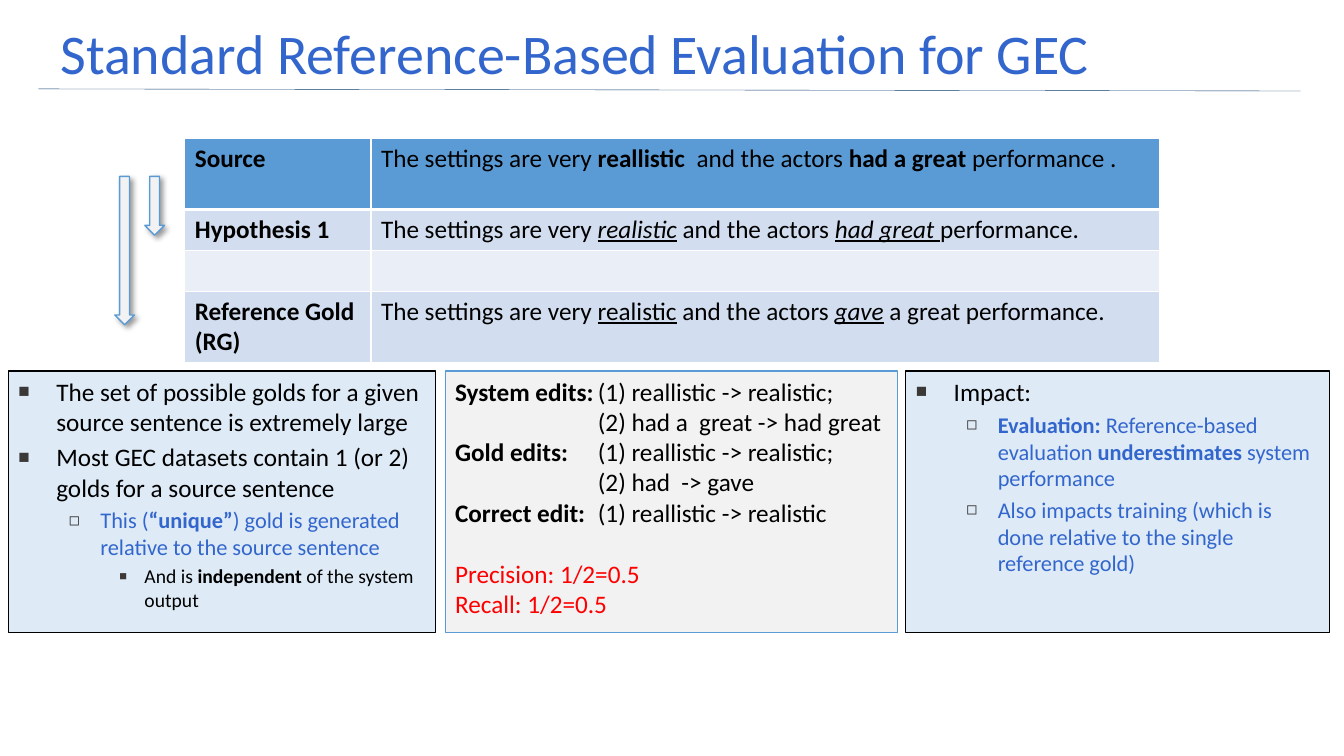
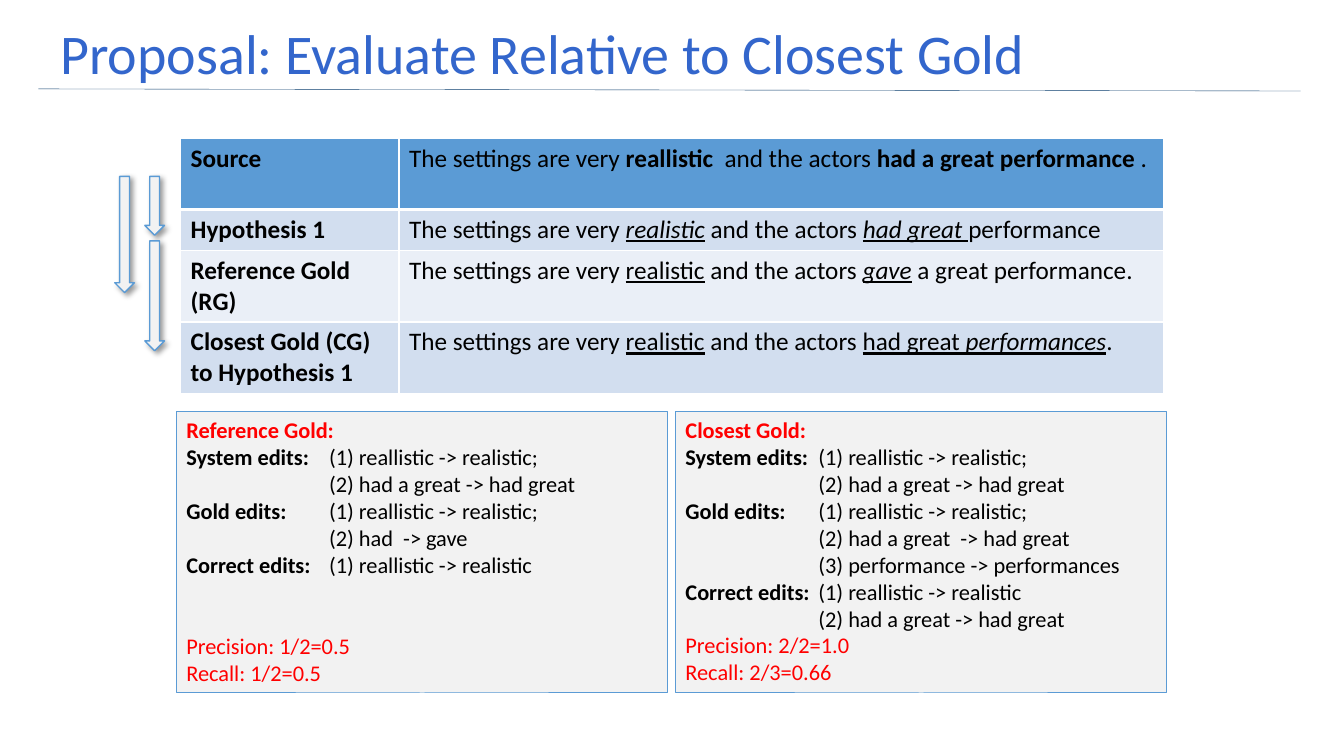
from lxml import etree
from pptx import Presentation
from pptx.dml.color import RGBColor
from pptx.enum import shapes, text
from pptx.oxml.ns import qn
from pptx.util import Pt

FONT = "Calibri"
BLUE, RED, BLACK, WHITE = "3366CC", "FF0000", "000000", "FFFFFF"
ACCENT, PALE_BLUE, PALE_GRAY, RULE = "5B9BD5", "DEEBF7", "F2F2F2", "093D6E"
BAND_DARK, BAND_LIGHT = "D2DEEF", "EAEFF7"
TWO_CONTENT, TITLE_ONLY = 3, 5

START, MIDDLE = "The settings are very ", " and the actors "
SOURCE = [START, ("reallistic", "b"), " " + MIDDLE]
HYPOTHESIS = [START, ("realistic", "iu"), MIDDLE, ("had great ", "iu")]
GOLD = [START, ("realistic", "u"), MIDDLE]
REFERENCE_ROW = ("Reference Gold (RG)",
                 GOLD + [("gave", "iu"), " a great performance."], 51)

STANDARD = dict(
    title="Standard Reference-Based Evaluation for GEC",
    table=dict(x=132, cols=(133, 563), rows=[
        ("Source", SOURCE + [("had a great ", "b"), "performance ."], 51),
        ("Hypothesis 1", HYPOTHESIS + ["performance."], 29.2),
        ("", [], 29.2),
        REFERENCE_ROW]),
    arrows=[(103.5, 126, 42), (82, 126, 106)],
    edits=[dict(box=(318, 265, 323, 187), size=18, tab=102, gap=22, heading="", lines=[
        ("System edits:", "(1) reallistic -> realistic;"),
        ("", "(2) had a  great -> had great"),
        ("Gold edits:", "(1) reallistic -> realistic;"),
        ("", "(2) had  -> gave"),
        ("Correct edit:", "(1) reallistic -> realistic")],
        scores=["Precision: 1/2=0.5", "Recall: 1/2=0.5"])],
    lists=[
        ((6, 265, 305, 187), [
            (0, ["The set of possible golds for a given source sentence is extremely large"]),
            (0, ["Most GEC datasets contain 1 (or 2) golds for a source sentence"]),
            (1, ["This (", ("“unique”", "b"),
                 ") gold is generated relative to the source sentence"]),
            (2, ["And is ", ("independent", "b"), " of the system output"])]),
        ((647, 265, 303, 187), [
            (0, ["Impact:"]),
            (1, [("Evaluation:", "b"), " Reference-based evaluation ",
                 ("underestimates", "b"), " system performance"]),
            (1, ["Also impacts training (which is done relative to the single "
                 "reference gold)"])])])

PROPOSAL = dict(
    title="Proposal: Evaluate Relative to Closest Gold",
    table=dict(x=129, cols=(156, 546), rows=[
        ("Source", SOURCE + [("had a great performance ", "b"), "."], 51),
        ("Hypothesis 1", HYPOTHESIS + ["performance"], 29.2),
        REFERENCE_ROW,
        ("Closest Gold (CG) to Hypothesis 1",
         GOLD + [("had great ", "u"), ("performances", "iu"), "."], 51)]),
    arrows=[(103.5, 126, 42), (82, 126, 83), (103.5, 172, 78.5)],
    edits=[
        dict(box=(126, 294, 351, 201), size=16, tab=102, gap=39,
             heading="Reference Gold:", lines=[
                 ("System edits:", "(1) reallistic -> realistic;"),
                 ("", "(2) had a great -> had great"),
                 ("Gold edits:", "(1) reallistic -> realistic;"),
                 ("", "(2) had  -> gave"),
                 ("Correct edits:", "(1) reallistic -> realistic")],
             scores=["Precision: 1/2=0.5", "Recall: 1/2=0.5"]),
        dict(box=(482.5, 294, 351, 201), size=16, tab=95, gap=0,
             heading="Closest Gold:", lines=[
                 ("System edits:", "(1) reallistic -> realistic;"),
                 ("", "(2) had a great -> had great"),
                 ("Gold edits:", "(1) reallistic -> realistic;"),
                 ("", "(2) had a great  -> had great"),
                 ("", "(3) performance -> performances"),
                 ("Correct edits:", "(1) reallistic -> realistic"),
                 ("", "(2) had a great -> had great")],
             scores=["Precision: 2/2=1.0", "Recall: 2/3=0.66"])],
    lists=[])

LEVELS = [
    dict(size=18, color=BLACK, left=27, hang=27, mark="■", percent=75),
    dict(size=16, color=BLUE, left=58.5, hang=22.5, mark="◻", percent=80),
    dict(size=14, color=BLACK, left=90, hang=18, mark="■", percent=65)]


def rgb(value):
    return RGBColor.from_string(value)


def add_xml(parent, tag, **attrs):
    child = etree.SubElement(parent, qn(tag))
    for key, value in attrs.items():
        child.set(key, str(value))
    return child


def place(sp, box):
    sp.left, sp.top, sp.width, sp.height = map(Pt, box)


def paint(sp, fill, line, width):
    sp.fill.solid()
    sp.fill.fore_color.rgb = rgb(fill)
    sp.line.color.rgb = rgb(line)
    sp.line.width = Pt(width)


def write(p, parts, size, color=BLACK):
    for part in parts:
        words, style = (part, "") if isinstance(part, str) else part
        r = p.add_run()
        r.text = words
        f = r.font
        f.name, f.size, f.color.rgb = FONT, Pt(size), rgb(color)
        f.bold, f.italic, f.underline = (k in style for k in "biu")


def paragraphs(tf, count):
    return [tf.paragraphs[0]] + [tf.add_paragraph() for _ in range(count - 1)]


def set_up_master(prs, s):
    master = prs.slide_master
    place(master.placeholders[0], (36, 16.5, 778, 42))
    rule = s.shapes.add_connector(shapes.MSO_CONNECTOR.STRAIGHT,
                                  Pt(27.5), Pt(63.5), Pt(929), Pt(65))
    rule.line.color.rgb = rgb(RULE)
    rule.line.width = Pt(0.25)
    add_xml(rule.element.spPr, "a:effectLst")
    master.shapes.element.append(rule.element)


def add_title(s, title):
    tf = s.shapes.title.text_frame
    tf.text = title
    tf.auto_size = text.MSO_AUTO_SIZE.NONE
    tf.vertical_anchor = text.MSO_ANCHOR.MIDDLE
    p = tf.paragraphs[0]
    p.alignment = text.PP_ALIGN.LEFT
    f = p.runs[0].font
    f.name, f.size, f.color.rgb = FONT, Pt(40), rgb(BLUE)


def add_borders(cell, header):
    tcPr = cell._tc.get_or_add_tcPr()
    for i, side in enumerate("LRTB"):
        width = 3 if header and side == "B" else 1
        ln = add_xml(tcPr, "a:ln" + side, w=Pt(width))
        add_xml(add_xml(ln, "a:solidFill"), "a:srgbClr", val=WHITE)
        tcPr.insert(i, ln)


def add_table(s, x, cols, rows):
    heights = [row[2] for row in rows]
    tbl = s.shapes.add_table(len(rows), 2, Pt(x), Pt(98.6),
                             Pt(sum(cols)), Pt(sum(heights))).table
    tbl.horz_banding = False
    for col, width in zip(tbl.columns, cols):
        col.width = Pt(width)
    for i, (label, sentence, height) in enumerate(rows):
        tbl.rows[i].height = Pt(height)
        fill = ACCENT if i == 0 else BAND_DARK if i % 2 else BAND_LIGHT
        for cell, parts in zip(tbl.rows[i].cells, ([(label, "b")], sentence)):
            cell.fill.solid()
            cell.fill.fore_color.rgb = rgb(fill)
            add_borders(cell, i == 0)
            if label:
                write(cell.text_frame.paragraphs[0], parts, 18)


def add_arrow(s, x, y, height):
    arrow = s.shapes.add_shape(shapes.MSO_SHAPE.DOWN_ARROW,
                               Pt(x), Pt(y), Pt(14), Pt(height))
    paint(arrow, PALE_GRAY, ACCENT, 1)
    arrow.shadow.inherit = False
    effects = arrow.element.spPr.find(qn("a:effectLst"))
    shadow = add_xml(effects, "a:outerShdw", blurRad=Pt(4), dist=Pt(3),
                     dir=45 * 60000, algn="tl", rotWithShape=0)
    add_xml(add_xml(shadow, "a:srgbClr", val=BLACK), "a:alpha", val=40000)


def add_edits(s, box, size, tab, gap, heading, lines, scores):
    sp = s.shapes.add_shape(shapes.MSO_SHAPE.RECTANGLE, *map(Pt, box))
    sp.shadow.inherit = False
    paint(sp, PALE_GRAY, ACCENT, 0.75)
    tf = sp.text_frame
    tf.word_wrap = True
    tf.vertical_anchor = text.MSO_ANCHOR.TOP
    content = [([(heading, "b")], RED)] if heading else []
    content += [([(label + "\t", "b"), edit], BLACK) for label, edit in lines]
    content += [([score], RED) for score in scores]
    items = paragraphs(tf, len(content))
    for p, (parts, color) in zip(items, content):
        tabs = add_xml(p._p.get_or_add_pPr(), "a:tabLst")
        add_xml(tabs, "a:tab", pos=Pt(tab), algn="l")
        p.alignment = text.PP_ALIGN.LEFT
        write(p, parts, size, color)
    items[-len(scores)].space_before = Pt(gap)


def fill_list(sp, box, items):
    place(sp, box)
    paint(sp, PALE_BLUE, BLACK, 0.75)
    tf = sp.text_frame
    tf.auto_size = text.MSO_AUTO_SIZE.NONE
    tf.vertical_anchor = text.MSO_ANCHOR.TOP
    for i, (p, (level, parts)) in enumerate(zip(paragraphs(tf, len(items)), items)):
        look = LEVELS[level]
        p.level = level
        pPr = p._p.get_or_add_pPr()
        pPr.set("marL", str(Pt(look["left"])))
        pPr.set("indent", str(-Pt(look["hang"])))
        add_xml(add_xml(pPr, "a:buClr"), "a:srgbClr", val="3B3838")
        add_xml(pPr, "a:buSzPct", val=look["percent"] * 1000)
        add_xml(pPr, "a:buFont", typeface="Arial")
        add_xml(pPr, "a:buChar", char=look["mark"])
        p.space_before = Pt(look["size"] * 0.2 if i else 0)
        write(p, parts, look["size"], look["color"])


def main():
    prs = Presentation()
    prs.slide_width, prs.slide_height = Pt(960), Pt(540)
    for i, content in enumerate((STANDARD, PROPOSAL)):
        layout = TWO_CONTENT if content["lists"] else TITLE_ONLY
        s = prs.slides.add_slide(prs.slide_layouts[layout])
        if i == 0:
            set_up_master(prs, s)
        add_title(s, content["title"])
        add_table(s, **content["table"])
        for arrow in content["arrows"]:
            add_arrow(s, *arrow)
        for edits in content["edits"]:
            add_edits(s, **edits)
        for idx, (box, items) in enumerate(content["lists"], 1):
            fill_list(s.placeholders[idx], box, items)
    prs.save("out.pptx")


if __name__ == "__main__":
    main()
